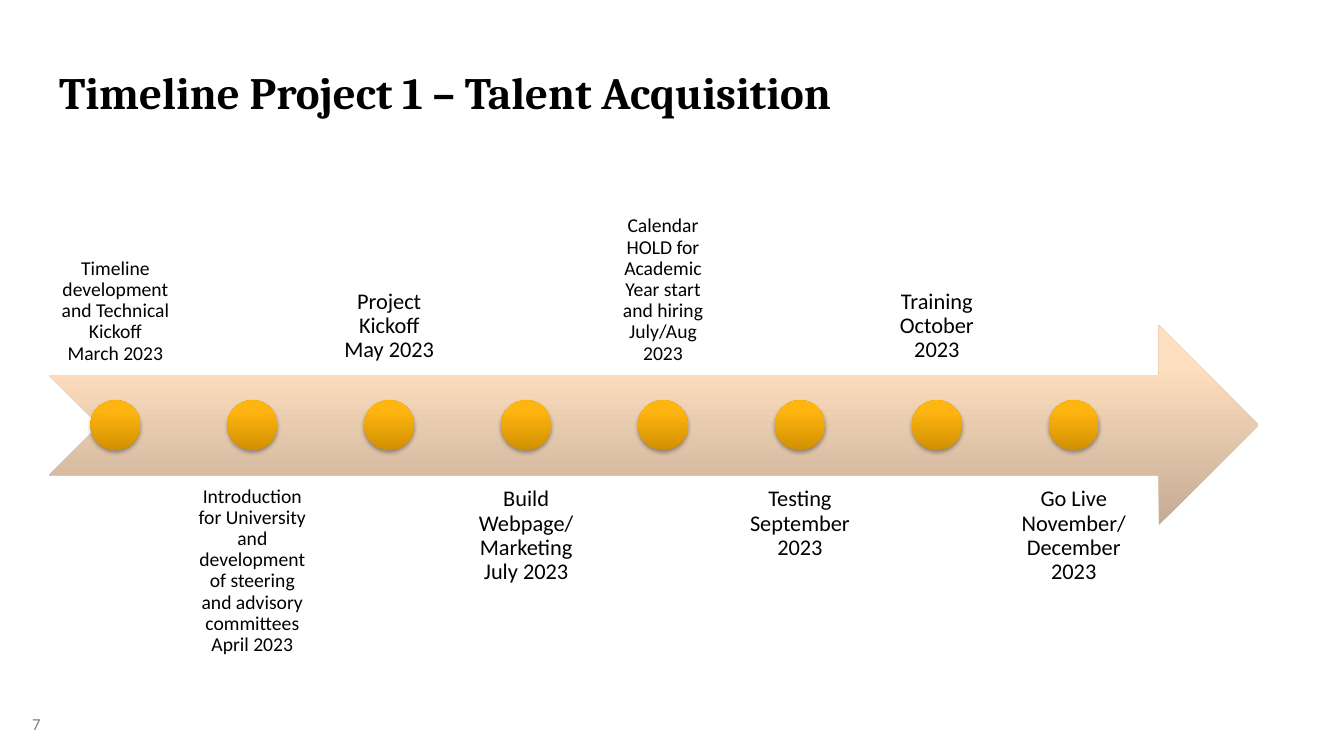
from copy import deepcopy

from lxml import etree
from pptx import Presentation
from pptx.dml.color import RGBColor
from pptx.enum import shapes, text
from pptx.oxml import ns
from pptx.util import Cm, Pt

BLACK = RGBColor(0x00, 0x00, 0x00)
GREY = RGBColor(0x80, 0x80, 0x80)
ARROW_COLORS = (RGBColor(0xC4, 0xAB, 0x93), RGBColor(0xFE, 0xDF, 0xBF),
                RGBColor(0xFF, 0xE0, 0xC0))
DOT_COLORS = (RGBColor(0xD1, 0x90, 0x00), RGBColor(0xFF, 0xB5, 0x10),
              RGBColor(0xFF, 0xB5, 0x12))
GRADIENT_POSITIONS = (0, 0.8, 1)

# step, date, text size
MILESTONES = [
    ("Timeline development and Technical Kickoff", "March 2023", 14),
    ("Introduction for University and development of steering and "
     "advisory committees", "April 2023", 14),
    ("Project Kickoff", "May 2023", 16),
    ("Build Webpage/Marketing", "July 2023", 16),
    ("Calendar HOLD for Academic Year start and hiring", "July/Aug 2023", 14),
    ("Testing", "September 2023", 16),
    ("Training", "October 2023", 16),
    ("Go Live", "November/December 2023", 16),
]


def add_text(slide, box, content, size, font="Calibri", color=BLACK,
             bold=False, anchor=text.MSO_ANCHOR.TOP):
    tb = slide.shapes.add_textbox(*map(Cm, box))
    tf = tb.text_frame
    tf.word_wrap = True
    tf.vertical_anchor = anchor
    tf.text = content
    for r in tf.paragraphs[0].runs:
        r.font.name = font
        r.font.size = Pt(size)
        r.font.bold = bold
        r.font.color.rgb = color
    return tf


def add_gradient_shape(slide, kind, box, colors):
    """Add a shape without outline, its gradient running from bottom to top."""
    sp = slide.shapes.add_shape(kind, *map(Cm, box))
    sp.shadow.inherit = False
    sp.line.fill.background()
    sp.fill.gradient()
    sp.fill.gradient_angle = 90
    stop_list = sp._element.spPr.find(".//" + ns.qn("a:gsLst"))
    stop_list.append(deepcopy(stop_list[-1]))
    for stop, color, position in zip(sp.fill.gradient_stops, colors,
                                     GRADIENT_POSITIONS):
        stop.color.rgb = color
        stop.position = position
    return sp


def add_drop_shadow(sp):
    effects = sp._element.spPr.find(ns.qn("a:effectLst"))
    shadow = etree.SubElement(effects, ns.qn("a:outerShdw"), {
        "blurRad": str(Pt(3.1)), "dist": str(Pt(1.8)), "dir": "5400000",
        "algn": "ctr", "rotWithShape": "0"})
    color = etree.SubElement(shadow, ns.qn("a:srgbClr"), val=str(BLACK))
    etree.SubElement(color, ns.qn("a:alpha"), val="35000")


def add_label(slide, box, content, size, anchor):
    tf = add_text(slide, box, content, size, anchor=anchor)
    inset = Pt(size * 0.56)
    tf.margin_left = tf.margin_right = inset
    tf.margin_top = tf.margin_bottom = inset
    p = tf.paragraphs[0]
    p.alignment = text.PP_ALIGN.CENTER
    p.line_spacing = 0.9


def add_timeline(slide, box):
    """Draw the arrow in the box, with labels alternating above and below."""
    left, top, width, height = box
    add_gradient_shape(slide, shapes.MSO_SHAPE.NOTCHED_RIGHT_ARROW, box,
                       ARROW_COLORS)
    middle = top + height / 2
    half_shaft = dot = height / 4
    label_width, pitch = 3.28, 3.45
    for i, (step, date, size) in enumerate(MILESTONES):
        x = left + 0.03 + i * pitch
        if i % 2 == 0:
            y, anchor = middle - half_shaft - height, text.MSO_ANCHOR.BOTTOM
        else:
            y, anchor = middle + half_shaft, text.MSO_ANCHOR.TOP
        add_label(slide, (x, y, label_width, height), f"{step}\v{date}",
                  size, anchor)
        sp = add_gradient_shape(
            slide, shapes.MSO_SHAPE.OVAL,
            (x + (label_width - dot) / 2, middle - dot / 2, dot, dot),
            DOT_COLORS)
        add_drop_shadow(sp)


def main():
    prs = Presentation()
    prs.slide_width, prs.slide_height = Cm(33.87), Cm(19.05)
    slide = prs.slides.add_slide(prs.slide_layouts[6])
    add_text(slide, (0.56, 17.86, 3.1, 1.4), "7", 12, color=GREY)
    add_text(slide, (1.24, 0.76, 31.47, 2.36),
             "Timeline Project 1 – Talent Acquisition", 32, font="Cambria",
             bold=True, anchor=text.MSO_ANCHOR.BOTTOM)
    add_timeline(slide, (1.24, 8.2, 30.48, 5.03))
    prs.save("out.pptx")


if __name__ == "__main__":
    main()
